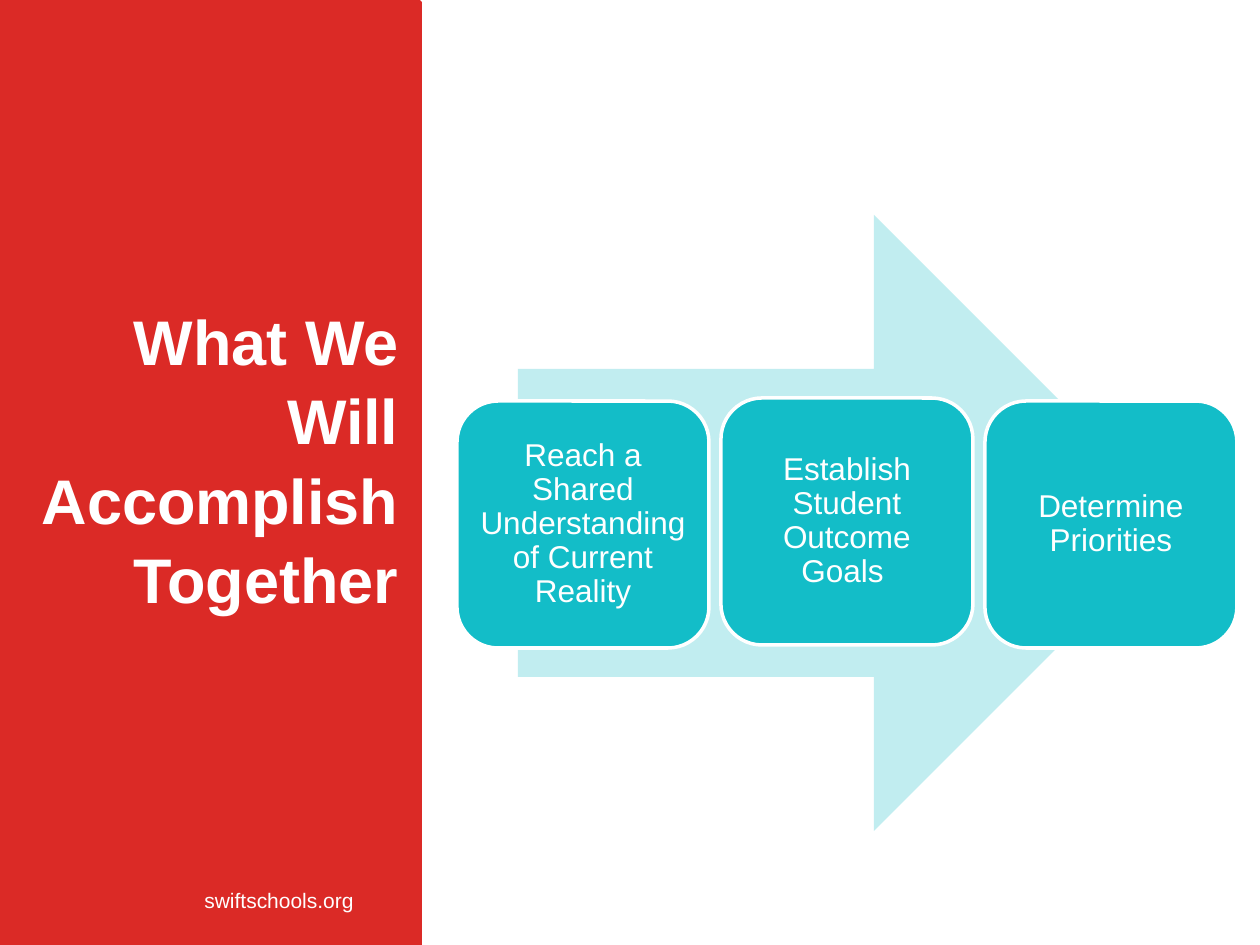
from dataclasses import dataclass

from lxml.etree import SubElement
from pptx import Presentation
from pptx.dml.color import RGBColor
from pptx.enum.shapes import MSO_SHAPE
from pptx.enum.text import MSO_ANCHOR, PP_ALIGN
from pptx.oxml.ns import qn
from pptx.util import Emu, Pt


@dataclass
class Theme:
    red: RGBColor = RGBColor(0xDB, 0x2A, 0x26)
    teal: RGBColor = RGBColor(0x13, 0xBD, 0xC8)
    white: RGBColor = RGBColor(0xFF, 0xFF, 0xFF)
    font: str = "Arial"
    title: Pt = Pt(36)
    step: Pt = Pt(18)
    footer: Pt = Pt(12)
    line: Pt = Pt(2)


theme = Theme()
EMU_PER_PX = 914400 / 126


def box(shape, x, y, w, h, fill=None, line=None):
    at = [Emu(round(v * EMU_PER_PX)) for v in (x, y, w, h)]
    if shape is None:
        return s.shapes.add_textbox(*at)
    sp = s.shapes.add_shape(shape, *at)
    sp.shadow.inherit = False
    sp.fill.solid()
    sp.fill.fore_color.rgb = fill
    if line is None:
        sp.line.fill.background()
    else:
        sp.line.color.rgb = line
        sp.line.width = theme.line
    return sp


def write(sp, text, size, align, anchor, spacing=1.0, bold=False):
    tf = sp.text_frame
    tf.word_wrap = True
    tf.vertical_anchor = anchor
    tf.text = text
    p = tf.paragraphs[0]
    p.alignment = align
    p.line_spacing = spacing
    r = p.runs[0]
    r.font.name = theme.font
    r.font.size = size
    r.font.bold = bold
    r.font.color.rgb = theme.white
    return tf


prs = Presentation()
prs.slide_width = Emu(round(1260 * EMU_PER_PX))
prs.slide_height = Emu(round(945 * EMU_PER_PX))
s = prs.slides.add_slide(prs.slide_layouts[6])

panel = box(MSO_SHAPE.RECTANGLE, 0, 2, 420, 945, theme.red, theme.red)
footer = box(None, 192, 881, 219, 38)
write(footer, "swiftschools.org", theme.footer, PP_ALIGN.LEFT, MSO_ANCHOR.TOP)
title = box(None, 9, 299, 402, 317)
write(title, "What We Will Accomplish Together", theme.title,
      PP_ALIGN.RIGHT, MSO_ANCHOR.MIDDLE, 1.05, True)

arrow = box(MSO_SHAPE.RIGHT_ARROW, 518, 215, 664, 616, theme.teal)
color = arrow.fill._xPr.find(qn("a:solidFill"))[0]
SubElement(color, qn("a:alpha")).set("val", "26000")

steps = [
    ("Reach a Shared Understanding of Current Reality", 401),
    ("Establish Student Outcome Goals ", 398),
    ("Determine Priorities", 401),
]
for i, (text, y) in enumerate(steps):
    sp = box(MSO_SHAPE.ROUNDED_RECTANGLE, 457 + 264 * i, y, 252, 247, theme.teal, theme.white)
    tf = write(sp, text, theme.step, PP_ALIGN.CENTER, MSO_ANCHOR.MIDDLE, 0.9)
    tf.margin_left = tf.margin_right = Emu(round(9 * EMU_PER_PX))
    tf.margin_top = tf.margin_bottom = Emu(round(9 * EMU_PER_PX))

prs.save("out.pptx")
